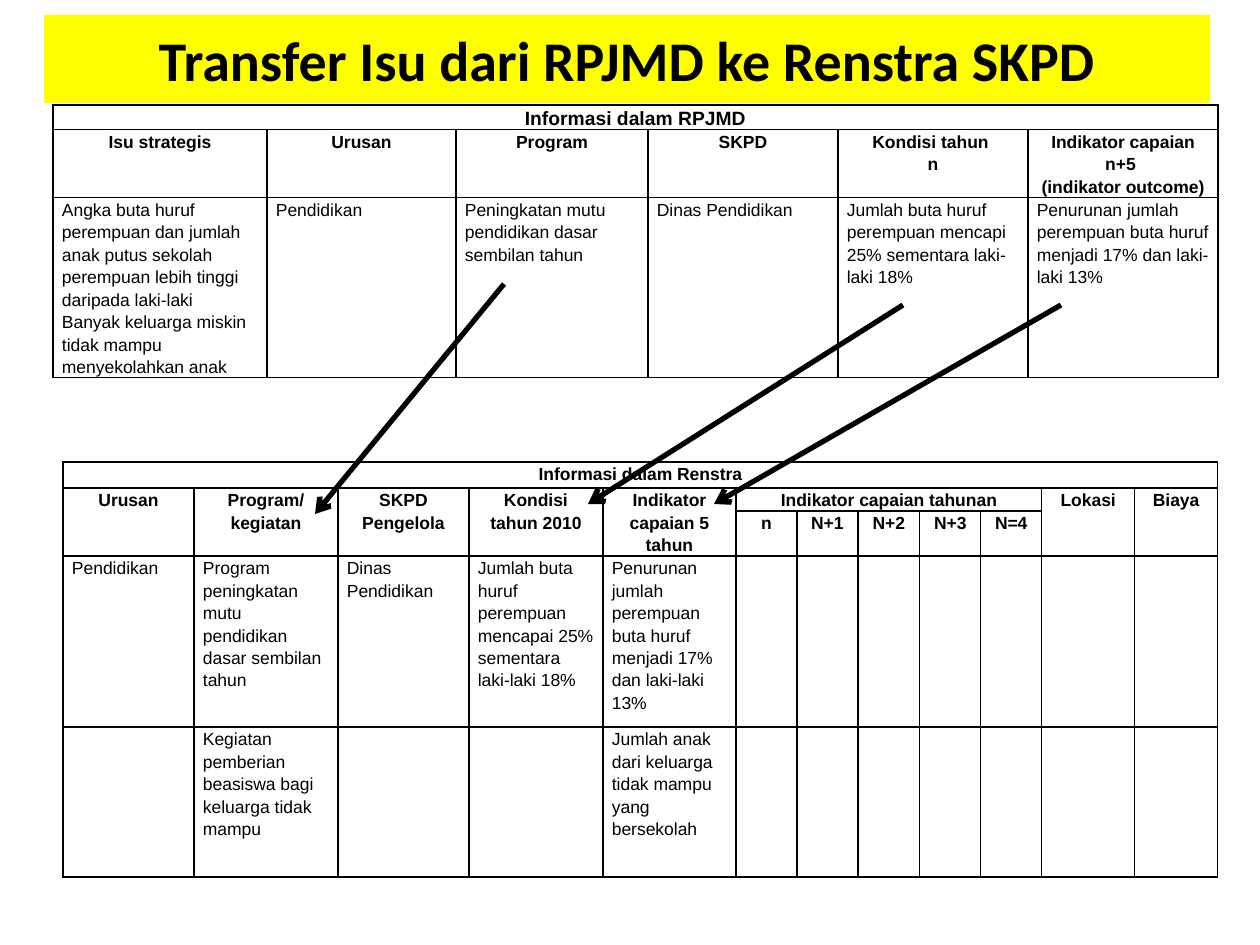
from lxml.etree import SubElement
from pptx import Presentation
from pptx.dml.color import RGBColor
from pptx.enum.shapes import MSO_CONNECTOR
from pptx.enum.text import MSO_ANCHOR, MSO_AUTO_SIZE, PP_ALIGN
from pptx.oxml.ns import qn
from pptx.util import Inches, Pt

BLACK = RGBColor(0, 0, 0)
WHITE = RGBColor(255, 255, 255)
YELLOW = RGBColor(255, 255, 0)
PX_PER_INCH = 126


def px(length):
    return Inches(length / PX_PER_INCH)


class SlideBuilder:
    heading_font = "Calibri"
    table_font = "Arial"

    def __init__(self, slide):
        self.slide = slide

    def style(self, paragraph, font_name, size, bold, align):
        paragraph.alignment = align
        font = paragraph.font
        font.name, font.size, font.bold = font_name, Pt(size), bold
        font.color.rgb = BLACK

    def title(self, text, left, top, width, height):
        title = self.slide.shapes.title
        title.left, title.top = px(left), px(top)
        title.width, title.height = px(width), px(height)
        title.fill.solid()
        title.fill.fore_color.rgb = YELLOW
        frame = title.text_frame
        frame.text = text
        frame.auto_size = MSO_AUTO_SIZE.NONE
        frame.vertical_anchor = MSO_ANCHOR.MIDDLE
        self.style(frame.paragraphs[0], self.heading_font, 32, True, PP_ALIGN.CENTER)

    def border(self, cell):
        properties = cell._tc.get_or_add_tcPr()
        for side in ("a:lnL", "a:lnR", "a:lnT", "a:lnB"):
            line = SubElement(properties, qn(side), w=str(Pt(1)))
            fill = SubElement(line, qn("a:solidFill"))
            SubElement(fill, qn("a:srgbClr"), val=str(BLACK))

    def cell(self, cell, text, size, header, fill):
        cell.margin_left = cell.margin_right = px(9)
        cell.margin_top = cell.margin_bottom = 0
        self.border(cell)
        if fill is None:
            cell.fill.background()
        else:
            cell.fill.solid()
            cell.fill.fore_color.rgb = fill
        cell.text = text
        align = PP_ALIGN.CENTER if header else PP_ALIGN.LEFT
        for paragraph in cell.text_frame.paragraphs:
            self.style(paragraph, self.table_font, size, header, align)
            paragraph.line_spacing = 1.15

    def table(self, left, top, widths, heights, rows, header_rows,
              merges, caption_size=10, fill=None):
        table = self.slide.shapes.add_table(
            len(heights), len(widths), px(left), px(top),
            px(sum(widths)), px(sum(heights))).table
        table.first_row = table.horz_banding = False
        for column, width in zip(table.columns, widths):
            column.width = px(width)
        for row, height in zip(table.rows, heights):
            row.height = px(height)
        for r, texts in enumerate(rows):
            padded = texts + [""] * (len(widths) - len(texts))
            for c, text in enumerate(padded):
                size = caption_size if r == 0 else 10
                self.cell(table.cell(r, c), text, size, r < header_rows, fill)
        for first, last in merges:
            table.cell(*first).merge(table.cell(*last))

    def arrow(self, start, end):
        arrow = self.slide.shapes.add_connector(
            MSO_CONNECTOR.STRAIGHT, *map(px, start + end))
        arrow.line.width = Pt(3)
        arrow.line.color.rgb = BLACK
        SubElement(arrow.line._get_or_add_ln(), qn("a:tailEnd"), type="arrow")
        SubElement(arrow._element.spPr, qn("a:effectLst"))


def main():
    presentation = Presentation()
    presentation.slide_width, presentation.slide_height = Inches(10), Inches(7.5)
    builder = SlideBuilder(presentation.slides.add_slide(presentation.slide_layouts[5]))

    builder.title("Transfer Isu dari RPJMD ke Renstra SKPD", 44, 15, 1166, 88)

    # Renstra: five plain columns, yearly indicators, then location and cost
    renstra_rows = [
        ["Informasi dalam Renstra"],
        ["Urusan", "Program/ kegiatan", "SKPD Pengelola", "Kondisi tahun 2010",
         "Indikator capaian 5 tahun", "Indikator capaian tahunan",
         "", "", "", "", "Lokasi", "Biaya"],
        [""] * 5 + ["n", "N+1", "N+2", "N+3", "N=4"],
        ["Pendidikan",
         "Program peningkatan mutu pendidikan dasar sembilan tahun",
         "Dinas Pendidikan",
         "Jumlah buta huruf perempuan mencapai 25% sementara laki-laki 18%",
         "Penurunan jumlah perempuan buta huruf menjadi 17% dan laki-laki 13%"],
        ["", "Kegiatan pemberian beasiswa bagi keluarga tidak mampu", "", "",
         "Jumlah anak dari keluarga tidak mampu yang bersekolah"],
    ]
    two_row_headers = [((1, c), (2, c)) for c in (0, 1, 2, 3, 4, 10, 11)]
    builder.table(
        63, 462, [131, 144, 131, 134, 133, 61, 61, 62, 61, 61, 93, 83],
        [26, 23, 45, 171, 150], renstra_rows, header_rows=3,
        merges=[((0, 0), (0, 11)), ((1, 5), (1, 9))] + two_row_headers)

    # RPJMD
    rpjmd_rows = [
        ["Informasi dalam RPJMD"],
        ["Isu strategis", "Urusan", "Program", "SKPD", "Kondisi tahun \nn",
         "Indikator capaian n+5 \n(indikator outcome)"],
        ["Angka buta huruf perempuan dan jumlah anak putus sekolah perempuan "
         "lebih tinggi daripada laki-laki\n"
         "Banyak keluarga miskin tidak mampu menyekolahkan anak",
         "Pendidikan",
         "Peningkatan mutu pendidikan dasar sembilan tahun",
         "Dinas Pendidikan",
         "Jumlah buta huruf perempuan mencapi 25% sementara laki-laki 18%",
         "Penurunan jumlah perempuan buta huruf menjadi 17% dan laki-laki 13%"],
    ]
    builder.table(
        53, 105, [214, 189, 192, 190, 190, 190], [24, 68, 180], rpjmd_rows,
        header_rows=2, merges=[((0, 0), (0, 5))], caption_size=11, fill=WHITE)

    # Transfers from RPJMD to Renstra
    for start, end in (((1061, 305), (714, 504)),
                       ((903, 305), (588, 504)),
                       ((504, 284), (315, 514))):
        builder.arrow(start, end)

    presentation.save("out.pptx")


if __name__ == "__main__":
    main()
